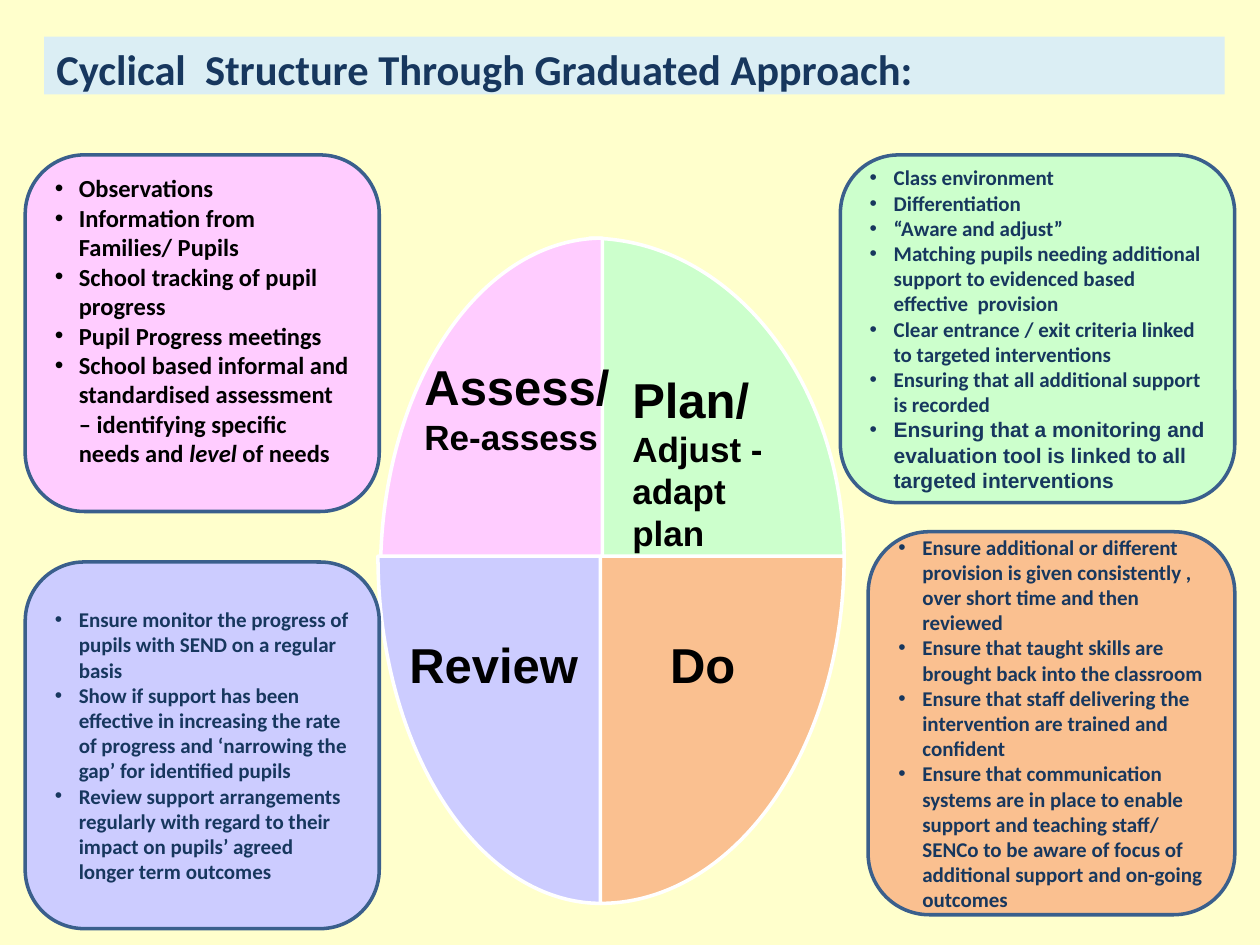
"""Build the graduated approach cycle slide."""
from lxml import etree
from pptx import Presentation
from pptx.dml.color import RGBColor
from pptx.enum.shapes import MSO_SHAPE
from pptx.enum.text import MSO_ANCHOR, MSO_AUTO_SIZE, PP_ALIGN
from pptx.oxml.ns import qn
from pptx.util import Inches, Pt

RECT, ROUND, PIE = MSO_SHAPE.RECTANGLE, MSO_SHAPE.ROUNDED_RECTANGLE, MSO_SHAPE.PIE
TOP, MID = MSO_ANCHOR.TOP, MSO_ANCHOR.MIDDLE
LEFT, GROW = PP_ALIGN.LEFT, MSO_AUTO_SIZE.SHAPE_TO_FIT_TEXT

WIDE, HIGH = Inches(10), Inches(7.5)
THEME = {
    "page": "FFFFCC", "band": "DBEEF4", "navy": "17375E", "black": "000000",
    "white": "FFFFFF", "edge": "3A5F8C", "green": "CCFFCC", "pink": "FFCCFF",
    "blue": "CCCCFF", "peach": "FAC090",
    "body": "Calibri", "label": "Arial",
    "title": 24.3, "big": 28, "mid": 20, "list": 14, "small": 12, "line": 2,
}
INDENT = Inches(0.19)
QUARTER = 54

TITLE = ("Cyclical  Structure Through Graduated Approach:", (3.5, 3.87, 93.7, 6.13))

PIES = [
    ("green", 3, (26.6, 25.2, 40.4, 67.87)),
    ("pink", 2, (30.2, 25.2, 35.2, 70.53)),
    ("blue", 1, (30, 22.13, 35.4, 73.47)),
    ("peach", 0, (28.3, 22.13, 38.7, 73.47)),
]

WORDS = [
    (["Assess/", "Re-assess"], (32.7, 37.07, 16.9, 12.13), False),
    (["Plan/", "Adjust - adapt plan"], (49.2, 38.4, 14, 21.07), True),
    (["Do"], (52.2, 66.53, 9.2, 7.6), True),
    (["Review"], (31.5, 66.53, 16.1, 7.6), True),
]

CARDS = [
    {"fill": "green", "ink": "navy", "size": "small", "last": "label", "foot": 0.05,
     "box": (66.7, 16.4, 31.3, 36.8), "items": [
         "Class environment",
         "Differentiation",
         "“Aware and adjust”",
         "Matching pupils needing additional support to evidenced based effective  provision",
         "Clear entrance / exit criteria linked to targeted interventions",
         "Ensuring that all additional support is recorded",
         "Ensuring that a monitoring and evaluation tool is linked to all targeted interventions"]},
    {"fill": "pink", "ink": "black", "size": "list", "last": "body", "foot": 0.25,
     "box": (2, 16.4, 28.1, 37.73), "items": [
         "Observations",
         "Information from Families/ Pupils",
         "School tracking of pupil progress",
         "Pupil Progress meetings",
         "School based informal and standardised assessment – identifying specific "
         "needs and *level* of needs"]},
    {"fill": "blue", "ink": "navy", "size": "small", "last": "body", "foot": 0.05,
     "box": (2, 59.47, 28.1, 38.8), "items": [
         "Ensure monitor the progress of pupils with SEND on a regular basis",
         "Show if support has been effective in increasing the rate of progress and "
         "‘narrowing the gap’ for identified pupils",
         "Review support arrangements regularly with regard to their impact on pupils’ "
         "agreed longer term outcomes"]},
    {"fill": "peach", "ink": "navy", "size": "small", "last": "body", "foot": 0.05,
     "box": (68.9, 56.27, 29.1, 40.53), "items": [
         "Ensure additional or different provision is given consistently , over short "
         "time and then reviewed",
         "Ensure that taught skills are brought back into the classroom",
         "Ensure that staff delivering the intervention are trained and confident",
         "Ensure that communication systems are in place to enable support and teaching "
         "staff/ SENCo to be aware of focus of additional support and on-going outcomes"]},
]


def tint(name):
    return RGBColor.from_string(THEME[name])


def place(box):
    return [int(side * part / 100) for side, part in zip((WIDE, HIGH) * 2, box)]


def draw(slide, kind, box, fill, edge=None):
    shape = slide.shapes.add_shape(kind, *place(box))
    shape.shadow.inherit = False
    shape.fill.solid()
    shape.fill.fore_color.rgb = tint(fill)
    if edge:
        shape.line.color.rgb = tint(edge)
        shape.line.width = Pt(THEME["line"])
    else:
        shape.line.fill.background()
    return shape


def style(para, size, face, ink):
    para.alignment = LEFT
    for run in para.runs:
        font = run.font
        font.size, font.name, font.bold = Pt(THEME[size]), THEME[face], True
        font.color.rgb = tint(ink)


def fill_text(frame, lines):
    frame.text = lines[0]
    for line in lines[1:]:
        frame.add_paragraph().text = line
    return frame.paragraphs


def add_bullet(para):
    props = para._p.get_or_add_pPr()
    props.set("marL", str(INDENT))
    props.set("indent", str(-INDENT))
    etree.SubElement(props, qn("a:buFont")).set("typeface", "Arial")
    etree.SubElement(props, qn("a:buChar")).set("char", "•")


def add_title(slide):
    text, box = TITLE
    frame = draw(slide, RECT, box, "band").text_frame
    frame.word_wrap, frame.vertical_anchor = True, TOP
    style(fill_text(frame, [text])[0], "title", "body", "navy")


def add_pie(slide, fill, turn, box):
    pie = draw(slide, PIE, box, fill, "white")
    pie.adjustments[0] = turn * QUARTER
    pie.adjustments[1] = (turn + 1) % 4 * QUARTER


def add_word(slide, lines, box, wrap):
    frame = slide.shapes.add_textbox(*place(box)).text_frame
    frame.word_wrap, frame.auto_size = wrap, GROW
    for para, size in zip(fill_text(frame, lines), ("big", "mid")):
        style(para, size, "label", "black")


def add_card(slide, card):
    frame = draw(slide, ROUND, card["box"], card["fill"], "edge").text_frame
    frame.word_wrap, frame.vertical_anchor = True, MID
    frame.margin_bottom = Inches(card["foot"])
    items = card["items"]
    faces = ["body"] * (len(items) - 1) + [card["last"]]
    for para, item, face in zip(fill_text(frame, items), items, faces):
        add_bullet(para)
        parts = item.split("*")
        para.runs[0].text = parts[0]
        for spot, part in enumerate(parts[1:], 1):
            run = para.add_run()
            run.text = part
            run.font.italic = spot % 2 == 1
        style(para, card["size"], face, card["ink"])


def main():
    deck = Presentation()
    deck.slide_width, deck.slide_height = WIDE, HIGH
    slide = deck.slides.add_slide(deck.slide_layouts[6])
    slide.background.fill.solid()
    slide.background.fill.fore_color.rgb = tint("page")
    add_title(slide)
    for pie in PIES:
        add_pie(slide, *pie)
    for word in WORDS:
        add_word(slide, *word)
    for card in CARDS:
        add_card(slide, card)
    deck.save("out.pptx")


if __name__ == "__main__":
    main()
